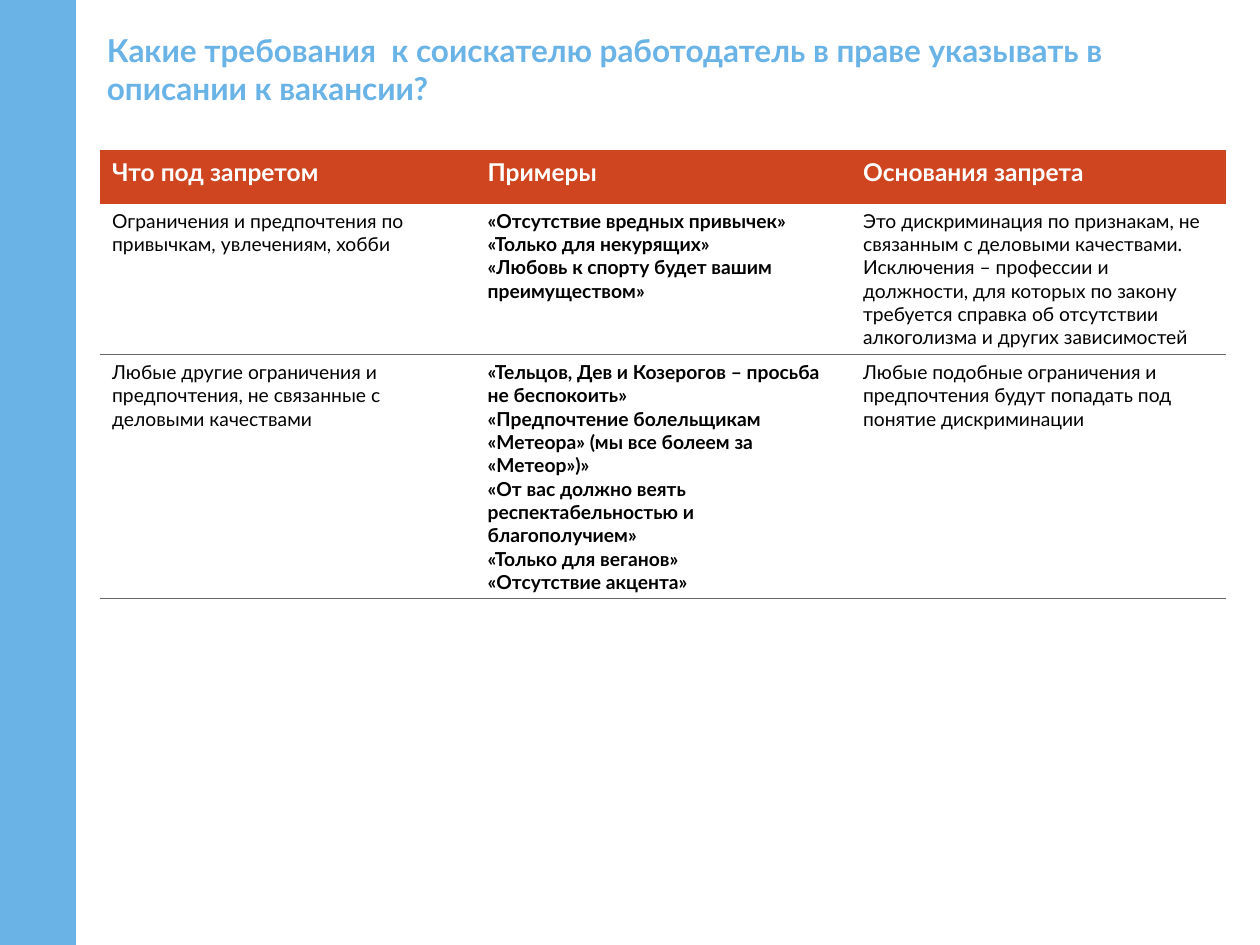
from lxml.etree import SubElement
from pptx import Presentation
from pptx.dml.color import RGBColor
from pptx.enum.shapes import MSO_SHAPE as Shape
from pptx.enum.text import MSO_AUTO_SIZE as AutoSize
from pptx.oxml.ns import qn
from pptx.util import Inches, Pt

FONT = "Lato"
BLUE, RED, WHITE, BLACK, GRAY = "69B3E7", "CF4520", "FFFFFF", "000000", "666666"
TITLE = "Какие требования  к соискателю работодатель в праве указывать в описании к вакансии?"
HEADERS = ["Что под запретом", "Примеры", "Основания запрета"]
RESTRICTIONS = [
    (
        ["Ограничения и предпочтения по привычкам, увлечениям, хобби"],
        [
            "«Отсутствие вредных привычек»",
            "«Только для некурящих»",
            "«Любовь к спорту будет вашим преимуществом»",
        ],
        [
            "Это дискриминация по признакам, не связанным с деловыми качествами. "
            "Исключения – профессии и должности, для которых по закону требуется "
            "справка об отсутствии алкоголизма и других зависимостей"
        ],
    ),
    (
        ["Любые другие ограничения и предпочтения, не связанные с деловыми качествами"],
        [
            "«Тельцов, Дев и Козерогов – просьба не беспокоить»",
            "«Предпочтение болельщикам «Метеора» (мы все болеем за «Метеор»)»",
            "«От вас должно веять респектабельностью и благополучием»",
            "«Только для веганов»",
            "«Отсутствие акцента»",
        ],
        ["Любые подобные ограничения и предпочтения будут попадать под понятие дискриминации"],
    ),
]


def color(value):
    return RGBColor.from_string(value)


def write(frame, lines, size, text_color, bold):
    for index, line in enumerate(lines):
        paragraph = frame.paragraphs[0] if index == 0 else frame.add_paragraph()
        run = paragraph.add_run()
        run.text = line
        run.font.name = FONT
        run.font.size = Pt(size)
        run.font.bold = bold
        run.font.color.rgb = color(text_color)


def add_sidebar(slide, left, top, width, height):
    shape = slide.shapes.add_shape(
        Shape.RECTANGLE, Inches(left), Inches(top), Inches(width), Inches(height)
    )
    shape.shadow.inherit = False
    shape.fill.solid()
    shape.fill.fore_color.rgb = color(BLUE)
    shape.line.color.rgb = color(BLUE)
    shape.line.width = Pt(2)


def add_title(slide, left, top, width, height):
    box = slide.shapes.add_textbox(Inches(left), Inches(top), Inches(width), Inches(height))
    box.text_frame.word_wrap = True
    box.text_frame.auto_size = AutoSize.SHAPE_TO_FIT_TEXT
    write(box.text_frame, [TITLE], 18, BLUE, True)


def set_borders(cell, horizontal):
    properties = cell._tc.get_or_add_tcPr()
    for side in ("L", "R", "T", "B"):
        line = SubElement(properties, qn(f"a:ln{side}"))
        if side in horizontal:
            border_color, width = horizontal[side]
            line.set("w", str(Pt(width)))
            fill = SubElement(line, qn("a:solidFill"))
            SubElement(fill, qn("a:srgbClr")).set("val", border_color)
        else:
            line.set("w", "0")
            SubElement(line, qn("a:noFill"))


def add_restrictions(slide, left, top, width, row_heights):
    table = slide.shapes.add_table(
        len(row_heights), len(HEADERS),
        Inches(left), Inches(top), Inches(width), Inches(sum(row_heights)),
    ).table
    table.first_row = False
    table.horz_banding = False
    for row, height in zip(table.rows, row_heights):
        row.height = Inches(height)
    header_edge, body_edge = (RED, 1), (GRAY, 0.5)
    for column, header in enumerate(HEADERS):
        cell = table.cell(0, column)
        set_borders(cell, {"T": header_edge, "B": header_edge})
        cell.fill.solid()
        cell.fill.fore_color.rgb = color(RED)
        write(cell.text_frame, [header], 14, WHITE, True)
    for row, contents in enumerate(RESTRICTIONS, start=1):
        top_edge = header_edge if row == 1 else body_edge
        for column, lines in enumerate(contents):
            cell = table.cell(row, column)
            set_borders(cell, {"T": top_edge, "B": body_edge})
            cell.fill.background()
            write(cell.text_frame, lines, 11, BLACK, HEADERS[column] == "Примеры")


def main():
    presentation = Presentation()
    presentation.slide_width = Inches(10)
    presentation.slide_height = Inches(7.5)
    slide = presentation.slides.add_slide(presentation.slide_layouts[6])
    add_title(slide, 0.75, 0.2, 8.74, 0.71)
    add_sidebar(slide, 0, 0, 0.59, 7.5)
    add_restrictions(slide, 0.79, 1.2, 8.94, [0.41, 1.19, 1.94])
    presentation.save("out.pptx")


if __name__ == "__main__":
    main()
